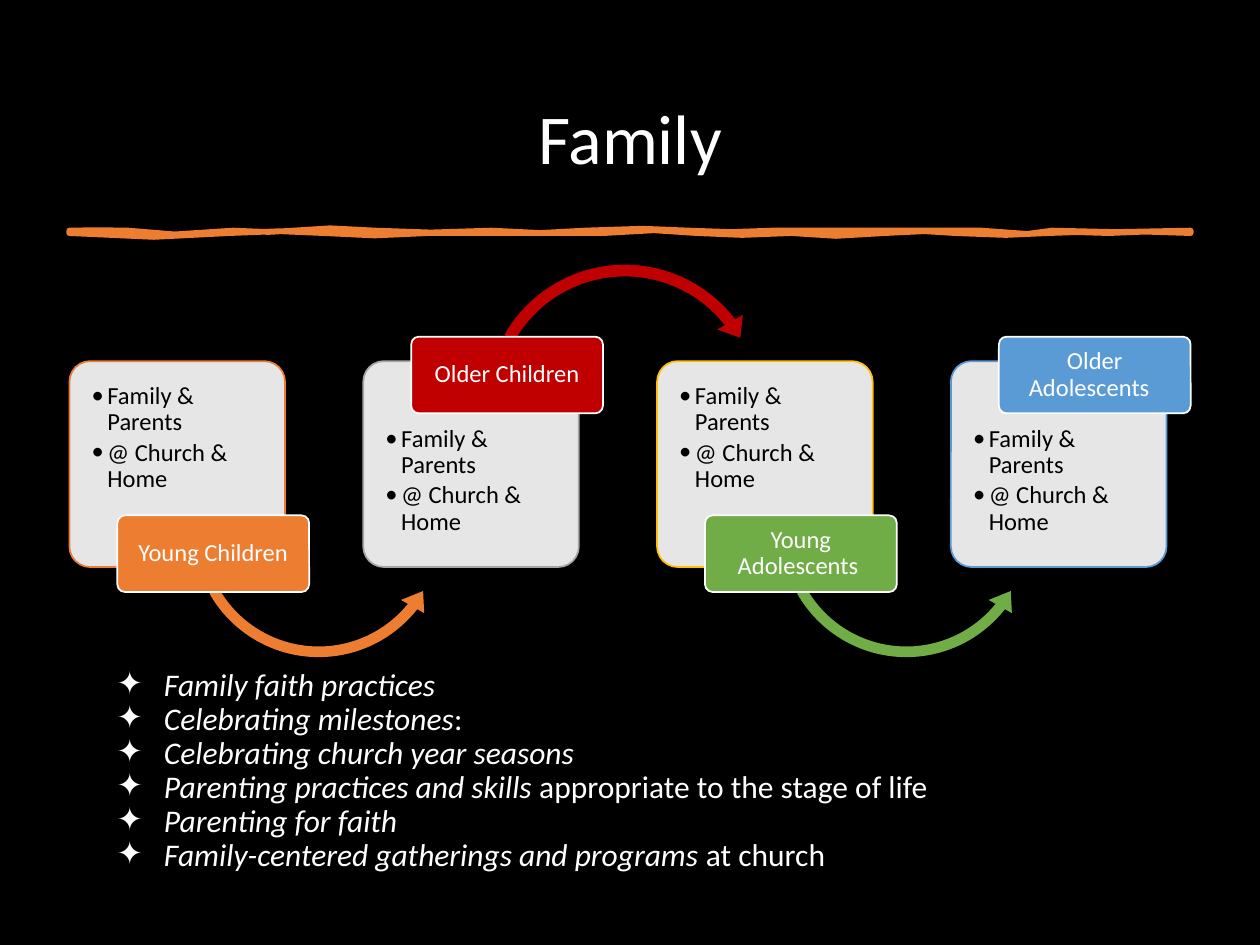
"""Build the Family slide: four age-stage cards joined by arrows, above a list of practices."""
from dataclasses import dataclass

from lxml.etree import SubElement
from pptx import Presentation
from pptx.dml.color import RGBColor
from pptx.enum.shapes import MSO_SHAPE
from pptx.enum.text import MSO_ANCHOR, PP_ALIGN
from pptx.oxml.ns import qn
from pptx.util import Pt


@dataclass(frozen=True)
class Theme:
    font: str = "Calibri"
    title: int = 40
    body: int = 18
    small: int = 14
    black: str = "000000"
    white: str = "FFFFFF"
    orange: str = "ED7D31"
    gray: str = "A5A5A5"
    red: str = "C00000"
    gold: str = "FFC000"
    green: str = "70AD47"
    blue: str = "5B9BD5"


T = Theme()

STAGES = [
    ("Young Children", T.orange, T.orange, False),
    ("Older Children", T.gray, T.red, True),
    ("Young Adolescents ", T.gold, T.green, False),
    ("Older Adolescents  ", T.blue, T.blue, True),
]
CARD_POINTS = ["Family & Parents", "@ Church & Home"]
PRACTICES = [
    ("Family faith practices", ""),
    ("Celebrating milestones", ":"),
    ("Celebrating church year seasons", ""),
    ("Parenting practices and skills ", "appropriate to the stage of life"),
    ("Parenting for faith", ""),
    ("Family-centered gatherings and programs ", "at church"),
]
CARD_LEFT, PITCH = 39.7, 167.9

RULE_UNIT = 0.72
RULE_CURVES = [
    (55, 183), (64, 184, 89, 181, 102, 183), (114, 187, 160, 187, 185, 183),
    (213, 185, 216, 184, 233, 183), (254, 184, 268, 177, 298, 183),
    (331, 185, 352, 185, 390, 183), (431, 184, 428, 187, 464, 183),
    (503, 182, 520, 180, 547, 183), (573, 185, 588, 184, 613, 183),
    (641, 182, 651, 184, 687, 183), (721, 182, 741, 184, 779, 183),
    (817, 187, 819, 186, 835, 183), (855, 186, 913, 183, 945, 183),
    (945, 184, 945, 185, 945, 185), (920, 181, 895, 186, 880, 185),
    (863, 185, 845, 183, 832, 185), (822, 186, 777, 188, 758, 185),
    (743, 180, 727, 186, 702, 185), (676, 189, 650, 187, 628, 185),
    (607, 185, 570, 189, 553, 185), (532, 183, 508, 181, 479, 185),
    (450, 186, 435, 184, 405, 185), (374, 187, 356, 183, 340, 185),
    (323, 187, 271, 188, 257, 185), (238, 183, 206, 183, 182, 185),
    (156, 189, 91, 189, 55, 185),
]


def rgb(color):
    return RGBColor.from_string(color)


def paint(sp, fill=None, line=None, width=1):
    sp.shadow.inherit = False
    if fill:
        sp.fill.solid()
        sp.fill.fore_color.rgb = rgb(fill)
    else:
        sp.fill.background()
    if line:
        sp.line.color.rgb = rgb(line)
        sp.line.width = Pt(width)
    else:
        sp.line.fill.background()


def add_preset(s, kind, box, adjustments, fill, line=None):
    sp = s.shapes.add_shape(kind, *map(Pt, box))
    for i, value in enumerate(adjustments):
        sp.adjustments[i] = value
    paint(sp, fill, line)
    return sp


def set_frame(sp, anchor, insets=(7.2, 3.6, 7.2, 3.6)):
    tf = sp.text_frame
    tf.word_wrap = True
    tf.vertical_anchor = anchor
    tf.margin_left, tf.margin_top, tf.margin_right, tf.margin_bottom = map(Pt, insets)
    return tf


def add_paragraph(tf, runs, size, color, align=PP_ALIGN.LEFT, after=0, bullet=None, indent=0):
    p = tf.paragraphs[0] if not tf.paragraphs[0].runs else tf.add_paragraph()
    p.alignment, p.line_spacing = align, 0.9
    p.space_before, p.space_after = Pt(0), Pt(after)
    if bullet:
        props = p._p.get_or_add_pPr()
        props.set("marL", str(Pt(indent)))
        props.set("indent", str(-Pt(indent)))
        SubElement(props, qn("a:buFont")).set("typeface", T.font)
        SubElement(props, qn("a:buChar")).set("char", bullet)
    for text, italic in runs:
        r = p.add_run()
        r.text = text
        r.font.name, r.font.size = T.font, Pt(size)
        r.font.italic = italic
        r.font.color.rgb = rgb(color)


def add_textbox(s, box, anchor):
    return set_frame(s.shapes.add_textbox(*map(Pt, box)), anchor)


def curve_points(curves, steps=2):
    x, y = curves[0]
    points = [(x, y)]
    for x1, y1, x2, y2, x3, y3 in curves[1:]:
        for t in (i / steps for i in range(1, steps + 1)):
            a, b, c, d = (1 - t) ** 3, 3 * t * (1 - t) ** 2, 3 * t * t * (1 - t), t ** 3
            points.append((a * x + b * x1 + c * x2 + d * x3, a * y + b * y1 + c * y2 + d * y3))
        x, y = x3, y3
    return [(Pt(px * RULE_UNIT), Pt(py * RULE_UNIT)) for px, py in points]


def add_rule(s):
    points = curve_points(RULE_CURVES)
    builder = s.shapes.build_freeform(*points[0])
    builder.add_line_segments(points[1:], close=True)
    paint(builder.convert_to_shape(), line=T.orange, width=3.25)


def add_card(s, left, line, raised):
    sp = add_preset(s, MSO_SHAPE.ROUNDED_RECTANGLE, (left, 206.4, 123.2, 117.6), [0.1], T.white, line)
    color = sp.fill._xPr.find(qn("a:solidFill"))[0]
    SubElement(color, qn("a:alpha")).set("val", "90000")
    tf = set_frame(sp, MSO_ANCHOR.TOP, (9.2, 33.6 if raised else 9.2, 9.2, 6))
    for text in CARD_POINTS:
        add_paragraph(tf, [(text, False)], T.small, T.black, after=2.1, bullet="•", indent=9)


def add_arrow(s, left, color, raised):
    if raised:
        kind, top, size = MSO_SHAPE.CIRCULAR_ARROW, 146.2, 168.5
        adjustments = [0.04, 4.82, 193.43, 125.76, 0.05]
    else:
        kind, top, size = MSO_SHAPE.LEFT_CIRCULAR_ARROW, 227.5, 152.6
        adjustments = [0.04, 5.37, 23.13, 90.25, 0.05]
    add_preset(s, kind, (left + (65.3 if raised else 66.1), top, size, size), adjustments, color)


def add_label(s, left, text, color, raised):
    box = (left + 27.4, 192.4 if raised else 294.5, 109.6, 43.8)
    sp = add_preset(s, MSO_SHAPE.ROUNDED_RECTANGLE, box, [0.1], color, T.white)
    tf = set_frame(sp, MSO_ANCHOR.MIDDLE, (2.2, 1.4, 2.2, 1.4))
    add_paragraph(tf, [(text, False)], T.small, T.white, PP_ALIGN.CENTER)


def main():
    prs = Presentation()
    prs.slide_width, prs.slide_height = Pt(720), Pt(540)
    s = prs.slides.add_slide(prs.slide_layouts[6])
    s.background.fill.solid()
    s.background.fill.fore_color.rgb = rgb(T.black)
    tf = add_textbox(s, (49.7, 28.8, 620.6, 104.4), MSO_ANCHOR.MIDDLE)
    add_paragraph(tf, [("Family", False)], T.title, T.white, PP_ALIGN.CENTER)
    add_rule(s)
    for i, (name, line, color, raised) in enumerate(STAGES):
        left = CARD_LEFT + i * PITCH
        add_card(s, left, line, raised)
        if i < len(STAGES) - 1:
            add_arrow(s, left, color, raised)
        add_label(s, left, name, color, raised)
    tf = add_textbox(s, (59.6, 378.7, 620.6, 132.5), MSO_ANCHOR.TOP)
    for lead, rest in PRACTICES:
        runs = [(lead, True)] + ([(rest, False)] if rest else [])
        add_paragraph(tf, runs, T.body, T.white, bullet="✦", indent=27)
    prs.save("out.pptx")


if __name__ == "__main__":
    main()
